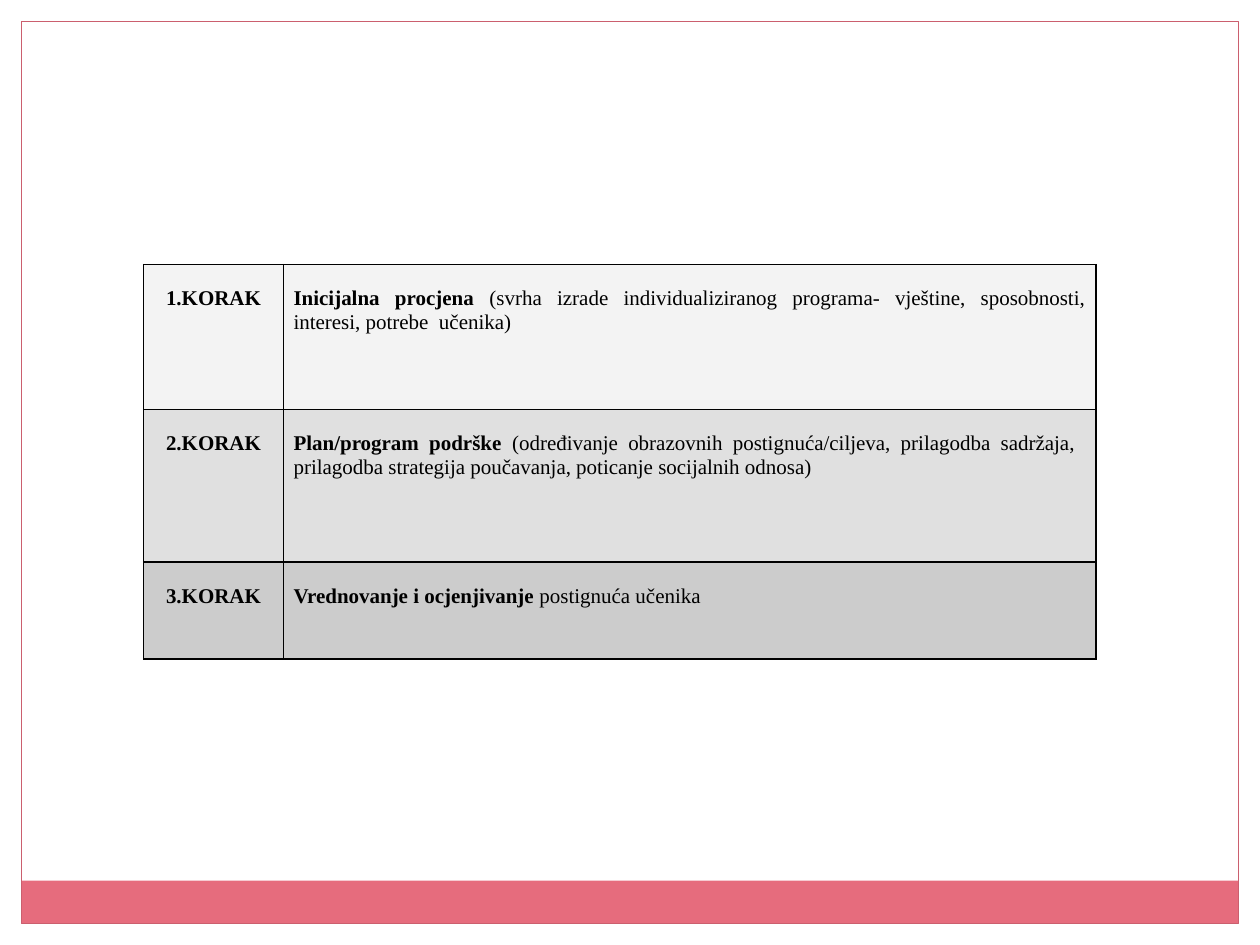
from lxml import etree
from pptx import Presentation
from pptx.dml.color import RGBColor
from pptx.enum.shapes import MSO_SHAPE
from pptx.enum.text import PP_ALIGN
from pptx.oxml.ns import qn
from pptx.util import Inches, Pt

RECTANGLE = MSO_SHAPE.RECTANGLE
CENTER, JUSTIFY = PP_ALIGN.CENTER, PP_ALIGN.JUSTIFY
BLANK_LAYOUT = 6
FONT = "Times New Roman"
BLACK, WHITE, PINK, DARK_PINK = "000000", "FFFFFF", "E66C7D", "CB5F6E"
SLIDE_WIDTH, SLIDE_HEIGHT, EDGE = 10, 7.5, 0.17

COLUMN_WIDTHS = (1.11, 6.45)
# Row height, fill, step label, bold lead, explanation
STEPS = [
    (1.15, "F3F3F3", "1.KORAK", "Inicijalna procjena",
     " (svrha izrade individualiziranog programa- vještine, sposobnosti, "
     "interesi, potrebe  učenika)"),
    (1.21, "E0E0E0", "2.KORAK", "Plan/program podrške",
     " (određivanje obrazovnih postignuća/ciljeva, prilagodba sadržaja,  "
     "prilagodba strategija poučavanja, poticanje socijalnih odnosa)"),
    (0.77, "CCCCCC", "3.KORAK", "Vrednovanje i ocjenjivanje",
     " postignuća učenika"),
]


def color(value):
    return RGBColor.from_string(value)


def add_rectangle(slide, left, top, width, height, fill=None, line=None):
    shape = slide.shapes.add_shape(
        RECTANGLE, Inches(left), Inches(top), Inches(width), Inches(height))
    shape.shadow.inherit = False
    if fill:
        shape.fill.solid()
        shape.fill.fore_color.rgb = color(fill)
    else:
        shape.fill.background()
    if line:
        shape.line.color.rgb = color(line)
        shape.line.width = Pt(0.75)
    else:
        shape.line.fill.background()


def add_frame(slide):
    """Draw the white page edges, the bottom band and the outline."""
    add_rectangle(slide, 0, 0, SLIDE_WIDTH, EDGE, fill=WHITE)
    for left in (SLIDE_WIDTH - EDGE, 0):
        add_rectangle(slide, left, 0, EDGE, SLIDE_HEIGHT, fill=WHITE)
    width, height = SLIDE_WIDTH - 2 * EDGE, SLIDE_HEIGHT - 2 * EDGE
    add_rectangle(slide, EDGE, 6.99, width, 0.34, fill=PINK)
    add_rectangle(slide, EDGE, EDGE, width, height, line=DARK_PINK)


def set_borders(cell, line_color, width):
    properties = cell._tc.get_or_add_tcPr()
    for position, side in enumerate(("a:lnL", "a:lnR", "a:lnT", "a:lnB")):
        line = etree.Element(qn(side), w=str(Pt(width)))
        fill = etree.SubElement(line, qn("a:solidFill"))
        etree.SubElement(fill, qn("a:srgbClr"), val=line_color)
        properties.insert(position, line)


def fill_cell(cell, fill, alignment, runs):
    """Style a cell and write its (text, bold) runs below one line of space."""
    cell.fill.solid()
    cell.fill.fore_color.rgb = color(fill)
    set_borders(cell, BLACK, 1)
    cell.margin_left = cell.margin_right = Inches(0.08)
    cell.margin_top, cell.margin_bottom = Inches(0.18), 0
    paragraph = cell.text_frame.paragraphs[0]
    paragraph.alignment = alignment
    for text, bold in runs:
        run = paragraph.add_run()
        run.text = text
        run.font.name = FONT
        run.font.size = Pt(12)
        run.font.bold = bold
        run.font.color.rgb = color(BLACK)


def add_steps_table(slide, left, top):
    height = sum(step[0] for step in STEPS)
    table = slide.shapes.add_table(
        len(STEPS), len(COLUMN_WIDTHS), Inches(left), Inches(top),
        Inches(sum(COLUMN_WIDTHS)), Inches(height)).table
    table.first_row = table.horz_banding = False
    for column, width in zip(table.columns, COLUMN_WIDTHS):
        column.width = Inches(width)
    for row, (height, fill, label, lead, explanation) in zip(table.rows, STEPS):
        row.height = Inches(height)
        fill_cell(row.cells[0], fill, CENTER, [(label, True)])
        fill_cell(row.cells[1], fill, JUSTIFY,
                  [(lead, True), (explanation, False)])


def main():
    presentation = Presentation()
    presentation.slide_width = Inches(SLIDE_WIDTH)
    presentation.slide_height = Inches(SLIDE_HEIGHT)
    slide = presentation.slides.add_slide(
        presentation.slide_layouts[BLANK_LAYOUT])
    add_frame(slide)
    add_steps_table(slide, 1.14, 2.1)
    presentation.save("out.pptx")


if __name__ == "__main__":
    main()
